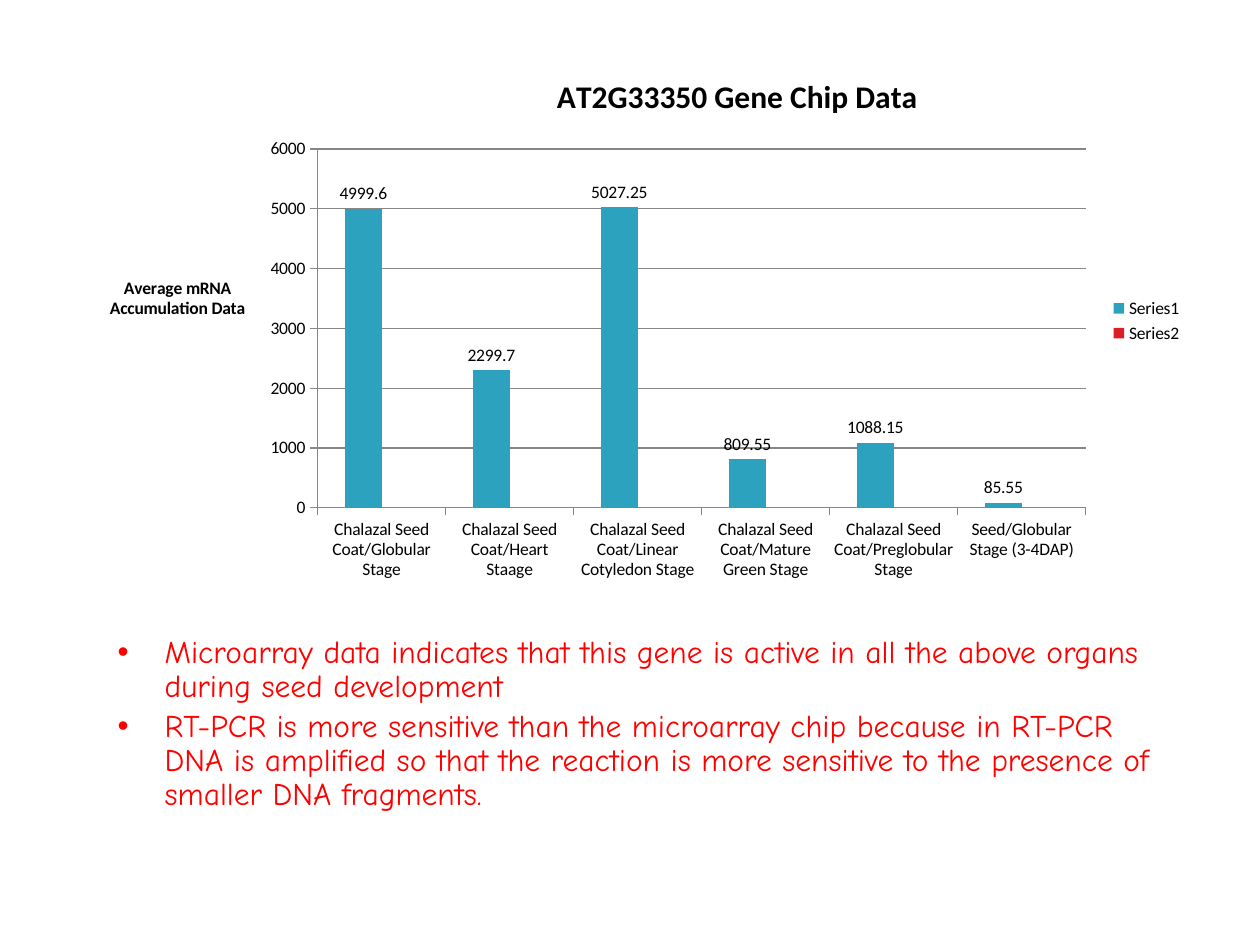
from lxml import etree
from pptx import Presentation
from pptx.chart.data import CategoryChartData
from pptx.dml.color import RGBColor
from pptx.enum.chart import XL_CHART_TYPE, XL_LABEL_POSITION, XL_LEGEND_POSITION, XL_TICK_MARK
from pptx.oxml import parse_xml
from pptx.oxml.ns import nsdecls, qn
from pptx.util import Cm, Pt

COLUMN = XL_CHART_TYPE.COLUMN_CLUSTERED
ABOVE = XL_LABEL_POSITION.OUTSIDE_END
RIGHT = XL_LEGEND_POSITION.RIGHT
OUT = XL_TICK_MARK.OUTSIDE
BLACK, RED, GREY = "000000", "FF0000", "868686"
DATA = {
    "Chalazal Seed Coat/Globular Stage": 4999.6,
    "Chalazal Seed Coat/Heart Staage": 2299.7,
    "Chalazal Seed Coat/Linear Cotyledon Stage": 5027.25,
    "Chalazal Seed Coat/Mature Green Stage": 809.55,
    "Chalazal Seed Coat/Preglobular Stage": 1088.15,
    "Seed/Globular Stage (3-4DAP)": 85.55,
}
NOTES = [
    "Microarray data indicates that this gene is active in all the above organs "
    "during seed development",
    "RT-PCR is more sensitive than the microarray chip because in RT-PCR DNA is "
    "amplified so that the reaction is more sensitive to the presence of smaller "
    "DNA fragments.",
]


def shade(text):
    """Turn a hex string into a colour."""
    return RGBColor.from_string(text)


def write(frame, text, size=10, font="Calibri", color=BLACK, bold=False):
    """Fill a text frame, one paragraph per line, and return the paragraphs."""
    frame.text = text
    for para in frame.paragraphs:
        face = para.runs[0].font
        face.name, face.size, face.bold = font, Pt(size), bold
        face.color.rgb = shade(color)
    return frame.paragraphs


def pin(part, **spots):
    """Fix a chart part at fractions of the chart area."""
    for old in part.findall(qn("c:layout")):
        part.remove(old)
    layout = parse_xml(f"<c:layout {nsdecls('c')}><c:manualLayout/></c:layout>")
    inner = "w" in spots
    rules = {"layoutTarget": "inner"} if inner else {}
    rules.update(xMode="edge", yMode="edge", **spots)
    for name, value in rules.items():
        etree.SubElement(layout[0], qn(f"c:{name}")).set("val", str(value))
    heads = [i for i, kid in enumerate(part) if kid.tag in (qn("c:tx"), qn("c:legendPos"))]
    part.insert(heads[0] + 1 if heads else 0, layout)


def rule(line):
    """Draw a chart line thin and grey."""
    line.color.rgb = shade(GREY)
    line.width = Pt(0.75)


def graph(slide, left, top, width, height):
    """Place the column chart in its box."""
    data = CategoryChartData()
    data.categories = list(DATA)
    data.add_series("Series1", list(DATA.values()))
    data.add_series("Series2", [None] * len(DATA))
    chart = slide.shapes.add_chart(COLUMN, left, top, width, height, data).chart
    chart.font.name, chart.font.size = "Calibri", Pt(10)
    chart.font.color.rgb = shade(BLACK)

    chart.has_title = True
    write(chart.chart_title.text_frame, "AT2G33350 Gene Chip Data", size=18, bold=True)
    axis = chart.value_axis
    axis.has_title = True
    frame = axis.axis_title.text_frame
    write(frame, "Average mRNA\nAccumulation Data", bold=True)
    frame._txBody.bodyPr.set("rot", "0")
    axis.minimum_scale, axis.maximum_scale, axis.major_unit = 0, 6000, 1000
    axis.has_major_gridlines = True
    rule(axis.major_gridlines.format.line)
    for item in (axis, chart.category_axis):
        item.major_tick_mark = OUT
        rule(item.format.line)

    chart.has_legend = True
    chart.legend.position = RIGHT
    chart.legend.include_in_layout = False
    plot = chart.plots[0]
    plot.gap_width, plot.overlap, plot.vary_by_categories = 150, 0, False
    for series, color in zip(plot.series, ("2DA2BF", "DA1F28")):
        series.format.fill.solid()
        series.format.fill.fore_color.rgb = shade(color)
        series.invert_if_negative = False
        labels = series.data_labels
        labels.show_value, labels.position = True, ABOVE

    root = chart._chartSpace.chart
    pin(root.find(qn("c:title")), x=0.42, y=0.03)
    pin(root.plotArea, x=0.21, y=0.18, w=0.69, h=0.67)
    pin(axis.axis_title._element, x=0.02, y=0.41)
    pin(root.find(qn("c:legend")), x=0.92, y=0.45)


def notes(slide, left, top, width, height):
    """Place the bulleted notes in their box."""
    frame = slide.shapes.add_textbox(left, top, width, height).text_frame
    frame.word_wrap = True
    for para in write(frame, "\n".join(NOTES), size=18, font="Comic Neue", color=RED):
        para.line_spacing, para.space_before = 0.9, Pt(3.6)
        props = para._p.get_or_add_pPr()
        props.set("marL", str(Cm(0.95)))
        props.set("indent", str(-Cm(0.95)))
        font = etree.SubElement(props, qn("a:buFont"))
        font.set("typeface", "Arial")
        etree.SubElement(props, qn("a:buChar")).set("char", "•")


def main():
    """Build and save the slide."""
    deck = Presentation()
    deck.slide_width, deck.slide_height = Cm(25.4), Cm(19.05)
    slide = deck.slides.add_slide(deck.slide_layouts[6])
    notes(slide, Cm(2.12), Cm(12.7), Cm(21.59), Cm(5.5))
    graph(slide, Cm(1.69), Cm(1.06), Cm(22.44), Cm(10.8))
    deck.save("out.pptx")


if __name__ == "__main__":
    main()
